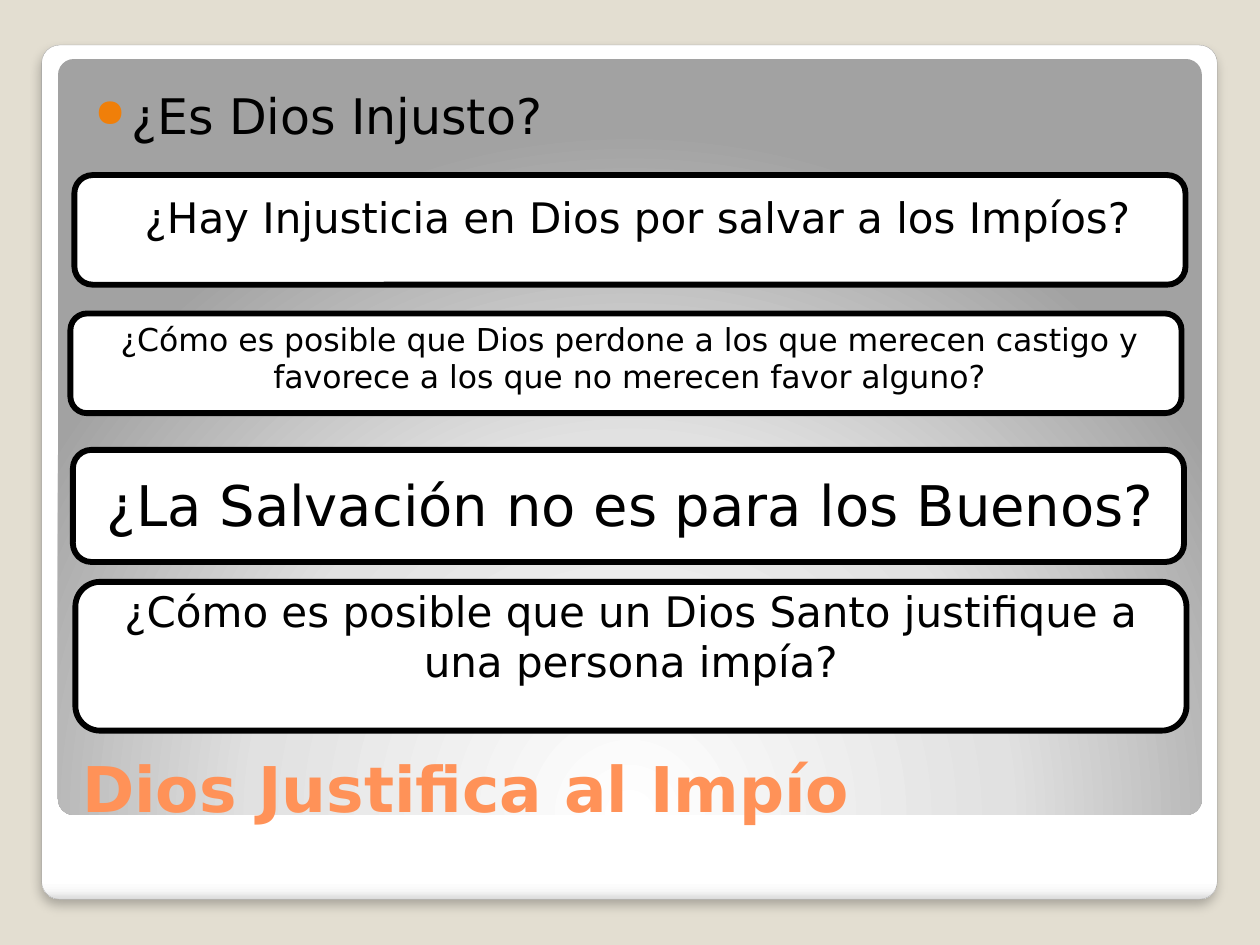
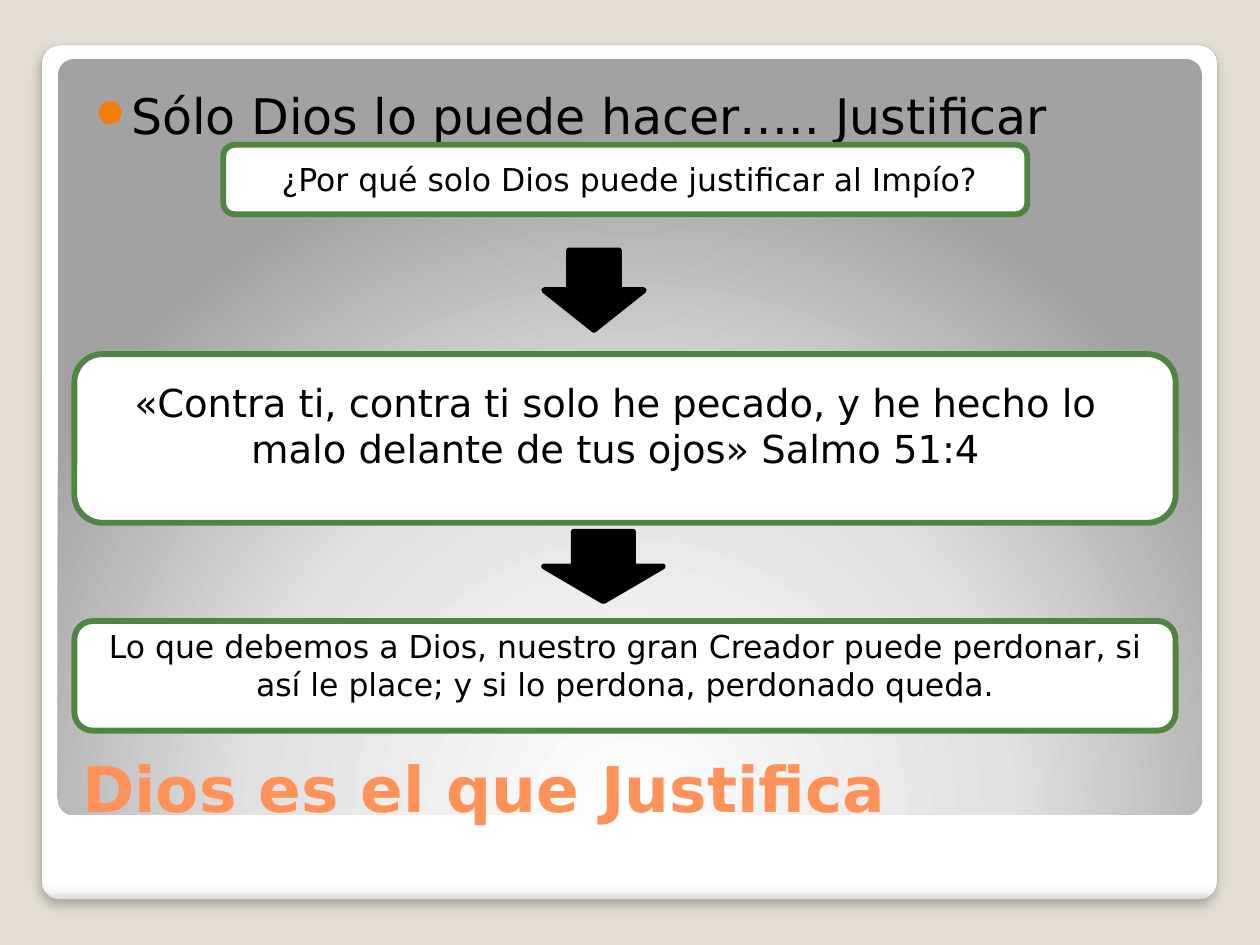
import pptx
import pptx.dml.color
import pptx.enum.shapes
import pptx.enum.text
import pptx.oxml
import pptx.oxml.ns
import pptx.util

Cm = pptx.util.Cm
Pt = pptx.util.Pt
MSO_SHAPE = pptx.enum.shapes.MSO_SHAPE
ANCHOR = pptx.enum.text.MSO_ANCHOR
ALIGN = pptx.enum.text.PP_ALIGN

FONT = "DejaVu Sans"
COLORS = {
    "background": "E3DED1",
    "white": "FFFFFF",
    "black": "000000",
    "title": "FF9258",
    "bullet": "F07F09",
    "green": "4E8542",
    "frame_line": "A4A4A4",
    "frame_shade": "F7F7F7",
    "frame_edge": "DADADA",
    "panel_middle": "E1E1E1",
    "panel_edge": "A2A2A2",
}
LINE_WIDTH = Pt(3.35)
TITLE_PLACE = (1.4, 13.84, 22.73, 2.92)
FRAME_PLACE = (0.84, 0.91, 23.7, 17.22)
PANEL_PLACE = (1.17, 1.19, 23.06, 15.24)
FRAME_ROUNDING = 0.021

TITLE_FORMAT = {"name": FONT, "size": Pt(36), "bold": True}
TITLE_FRAME = {
    "vertical_anchor": ANCHOR.BOTTOM,
    "word_wrap": True,
    "auto_size": pptx.enum.text.MSO_AUTO_SIZE.NONE,
}
BODY_FRAME = {"word_wrap": True, "margin_left": Cm(0.51), "margin_top": Cm(0.25)}
LABEL_FRAME = {"word_wrap": True}
# The deeper bottom margin lifts the centred text above the middle of the card.
CARD_TEXT_FRAME = {
    "word_wrap": True,
    "vertical_anchor": ANCHOR.MIDDLE,
    "margin_bottom": Cm(0.95),
}


def rgb(name):
    return pptx.dml.color.RGBColor.from_string(COLORS[name])


def cm_lengths(place):
    return [Cm(length) for length in place]


def set_attributes(target, values):
    for name, value in values.items():
        setattr(target, name, value)


def xml_element(tag, content):
    namespace = pptx.oxml.ns.nsdecls("a")
    return pptx.oxml.parse_xml(f"<a:{tag} {namespace}>{content}</a:{tag}>")


def write_text(text_frame, text, color, font_format, frame_format, alignment):
    set_attributes(text_frame, frame_format)
    paragraph = text_frame.paragraphs[0]
    paragraph.alignment = alignment
    run = paragraph.add_run()
    run.text = text
    set_attributes(run.font, font_format)
    run.font.color.rgb = rgb(color)
    return paragraph


def add_shape(slide, kind, place, fill="white", line=None, width=LINE_WIDTH):
    shape = slide.shapes.add_shape(kind, *cm_lengths(place))
    shape.shadow.inherit = False
    shape.fill.solid()
    shape.fill.fore_color.rgb = rgb(fill)
    if line:
        shape.line.color.rgb = rgb(line)
        shape.line.width = width
    else:
        shape.line.fill.background()
    return shape


def set_gradient(shape, stops, direction):
    """Replace the fill by a gradient of (percent, color name) stops."""
    stop_xml = "".join(
        f'<a:gs pos="{percent * 1000}"><a:srgbClr val="{COLORS[color]}"/></a:gs>'
        for percent, color in stops
    )
    properties = shape.element.spPr
    solid_fill = properties.find(pptx.oxml.ns.qn("a:solidFill"))
    gradient = xml_element("gradFill", f"<a:gsLst>{stop_xml}</a:gsLst>{direction}")
    properties.replace(solid_fill, gradient)


def add_soft_shadow(shape):
    effects = shape.element.spPr.find(pptx.oxml.ns.qn("a:effectLst"))
    shadow = xml_element(
        "effectLst",
        '<a:outerShdw blurRad="76200" dist="50800" dir="5400000" rotWithShape="0">'
        f'<a:srgbClr val="{COLORS["black"]}"><a:alpha val="25000"/></a:srgbClr>'
        "</a:outerShdw>",
    )
    effects.getparent().replace(effects, shadow)


def add_layout_frame(slide):
    """Build the frame and the grey panel, and move them to the slide's layout."""
    rounded = MSO_SHAPE.ROUNDED_RECTANGLE
    frame = add_shape(slide, rounded, FRAME_PLACE, line="frame_line", width=Pt(0.16))
    set_gradient(
        frame,
        [(0, "white"), (98, "white"), (99, "frame_shade"), (100, "frame_edge")],
        '<a:lin ang="5400000" scaled="0"/>',
    )
    add_soft_shadow(frame)
    panel = add_shape(slide, rounded, PANEL_PLACE)
    set_gradient(
        panel,
        [(0, "white"), (55, "panel_middle"), (100, "panel_edge")],
        '<a:path path="circle">'
        '<a:fillToRect l="50000" t="175000" r="50000" b="-75000"/></a:path>',
    )
    layout = slide.slide_layout
    for placeholder in list(layout.placeholders):
        if placeholder.placeholder_format.idx != 0:
            placeholder.element.getparent().remove(placeholder.element)
    for position, shape in enumerate((frame, panel), start=2):
        shape.adjustments[0] = FRAME_ROUNDING
        layout.shapes.element.insert(position, shape.element)


def set_title(slide, text):
    title = slide.shapes.title
    names = ("left", "top", "width", "height")
    set_attributes(title, dict(zip(names, cm_lengths(TITLE_PLACE))))
    write_text(title.text_frame, text, "title", TITLE_FORMAT, TITLE_FRAME, ALIGN.LEFT)


def add_bullet_line(slide, text):
    box = slide.shapes.add_textbox(*cm_lengths((1.4, 1.47, 22.73, 2.06)))
    font_format = {"name": FONT, "size": Pt(28)}
    paragraph = write_text(
        box.text_frame, text, "black", font_format, BODY_FRAME, ALIGN.LEFT
    )
    paragraph.space_before = Pt(2.5)
    properties = paragraph._p.get_or_add_pPr()
    indent = Cm(0.74)
    properties.set("marL", str(indent))
    properties.set("indent", str(-indent))
    bullet_color = xml_element("buClr", f'<a:srgbClr val="{COLORS["bullet"]}"/>')
    bullet_size = xml_element("buSzPct", "")
    bullet_size.set("val", "80000")
    bullet = xml_element("buChar", "")
    bullet.set("char", "●")
    properties.extend([bullet_color, bullet_size, bullet])


def add_card(slide, place, line):
    return add_shape(slide, MSO_SHAPE.ROUNDED_RECTANGLE, place, line=line)


def add_arrow(slide, place):
    add_shape(slide, MSO_SHAPE.DOWN_ARROW, place, fill="black", line="black")


def write_centered(shape, text, size, frame_format):
    font_format = {"name": FONT, "size": Pt(size)}
    write_text(
        shape.text_frame, text, "black", font_format, frame_format, ALIGN.CENTER
    )


def add_label(slide, place, text, size):
    box = slide.shapes.add_textbox(*cm_lengths(place))
    write_centered(box, text, size, LABEL_FRAME)


def add_labelled_cards(slide, line, cards):
    for card_place, label_place, size, text in cards:
        add_card(slide, card_place, line)
        add_label(slide, label_place, text, size)


def fill_questions_slide(slide):
    set_title(slide, "Dios Justifica al Impío")
    add_bullet_line(slide, "¿Es Dios Injusto?")
    add_labelled_cards(slide, "black", [
        ((1.5, 3.53, 22.4, 2.21), (1.9, 3.73, 21.92, 2.06), 24,
         "¿Hay Injusticia en Dios por salvar a los Impíos?"),
        ((1.42, 6.32, 22.4, 2.01), (1.9, 6.32, 21.59, 2.57), 18,
         "¿Cómo es posible que Dios perdone a los que merecen castigo y "
         "favorece a los que no merecen favor alguno?"),
        ((1.47, 9.07, 22.4, 2.26), (1.52, 9.37, 22.4, 1.63), 32,
         "¿La Salvación no es para los Buenos?"),
    ])
    holy_card = add_card(slide, (1.52, 11.73, 22.4, 3), "black")
    write_centered(
        holy_card,
        "¿Cómo es posible que un Dios Santo justifique a una persona impía?",
        24,
        CARD_TEXT_FRAME,
    )


def fill_answer_slide(slide):
    set_title(slide, "Dios es el que Justifica")
    add_bullet_line(slide, "Sólo Dios lo puede hacer….. Justificar")
    add_labelled_cards(slide, "green", [
        ((4.5, 2.92, 16.21, 1.4), (2.49, 3.1, 20.4, 1.02), 18,
         "¿Por qué solo Dios puede justificar al Impío?"),
        ((1.5, 7.14, 22.2, 3.4), (1.9, 7.52, 21.01, 2.13), 22,
         "«Contra ti, contra ti solo he pecado, y he hecho lo malo "
         "delante de tus ojos» Salmo 51:4"),
        ((1.5, 12.52, 22.2, 2.21), (1.9, 12.52, 21.41, 2.57), 18,
         "Lo que debemos a Dios, nuestro gran Creador puede perdonar, "
         "si así le place; y si lo perdona, perdonado queda."),
    ])
    add_arrow(slide, (10.97, 5.05, 2.01, 1.6))
    add_arrow(slide, (10.97, 10.72, 2.39, 1.4))


def main():
    presentation = pptx.Presentation()
    presentation.slide_width = Cm(25.4)
    presentation.slide_height = Cm(19.05)
    background = presentation.slide_master.background.fill
    background.solid()
    background.fore_color.rgb = rgb("background")

    title_only = presentation.slide_layouts.get_by_name("Title Only")
    questions = presentation.slides.add_slide(title_only)
    add_layout_frame(questions)
    fill_questions_slide(questions)
    fill_answer_slide(presentation.slides.add_slide(title_only))
    presentation.save("out.pptx")


if __name__ == "__main__":
    main()
